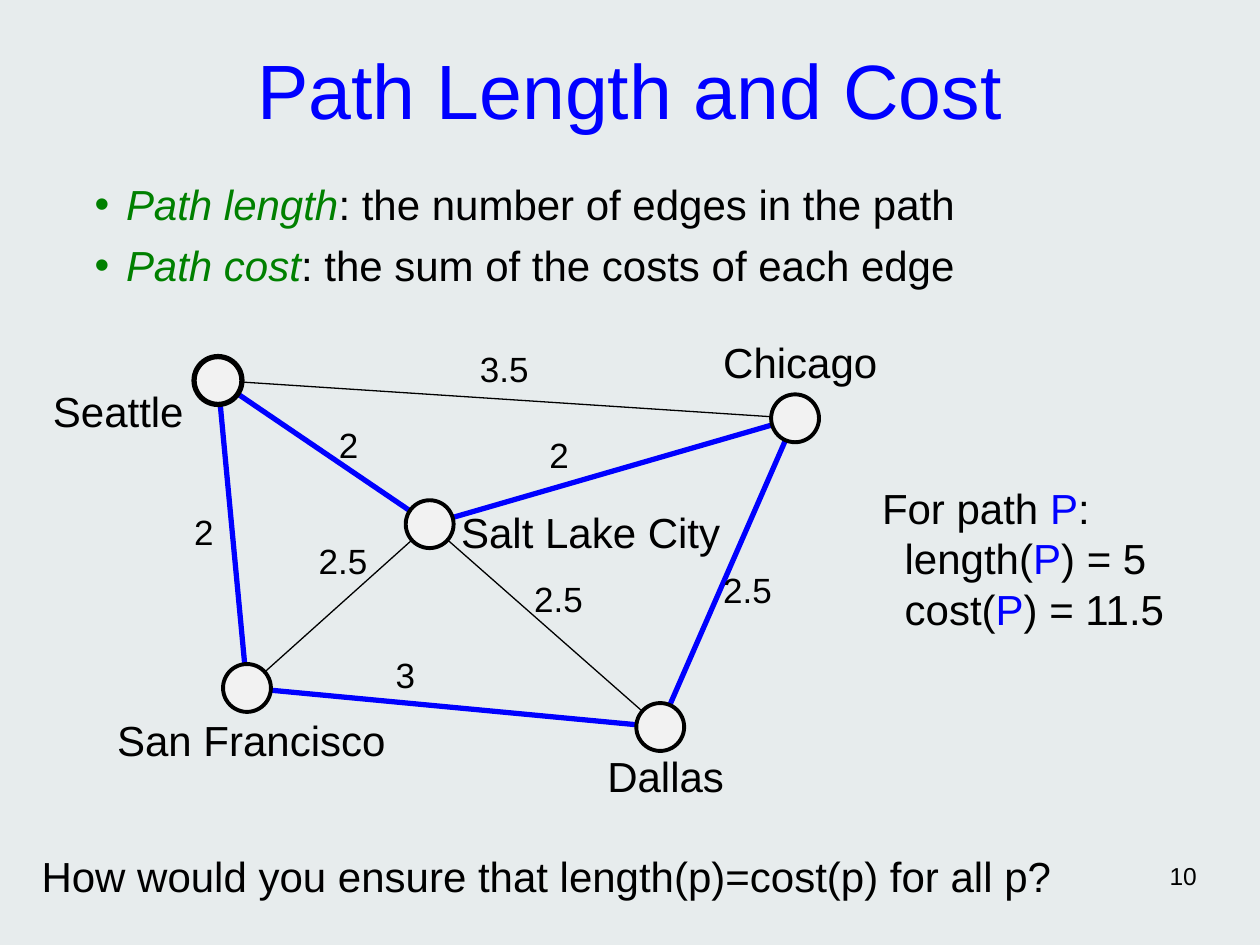
from dataclasses import dataclass

from lxml import etree
from pptx import Presentation
from pptx.dml.color import RGBColor
from pptx.enum.shapes import MSO_CONNECTOR, MSO_SHAPE
from pptx.enum.text import MSO_ANCHOR, MSO_AUTO_SIZE, PP_ALIGN
from pptx.oxml.ns import qn
from pptx.util import Inches, Pt

LINE = MSO_CONNECTOR.STRAIGHT
OVAL = MSO_SHAPE.OVAL
TOP, MIDDLE = MSO_ANCHOR.TOP, MSO_ANCHOR.MIDDLE
LEFT, CENTER, RIGHT = PP_ALIGN.LEFT, PP_ALIGN.CENTER, PP_ALIGN.RIGHT
FIXED = MSO_AUTO_SIZE.NONE


@dataclass(frozen=True)
class Theme:
    font: str = "Arial"
    back: str = "E7ECED"
    ink: str = "000000"
    blue: str = "0000FF"
    green: str = "008000"
    node: str = "F2F2F2"
    title: int = 44
    text: int = 24
    cost: int = 20
    number: int = 14
    lead: float = 1.2
    thin: float = 0.75
    ring: float = 2.25
    bold: float = 3


THEME = Theme()

# Graph data, relative to the graph box: centre, label box, ring width
CITIES = {
    "Seattle": ((1.31, 0.35), (0, 0.39, 1.15), THEME.bold),
    "San Francisco": ((1.54, 2.79), (0.51, 3, 2.24), THEME.ring),
    "Salt Lake City": ((2.99, 1.49), (3.24, 1.35, 2.17), THEME.ring),
    "Dallas": ((4.82, 3.1), (4.4, 3.29, 1.04), THEME.ring),
    "Chicago": ((5.89, 0.65), (5.32, 0, 1.34), THEME.ring),
}
# From, to, cost, label corner, on the path P
EDGES = [
    ("San Francisco", "Seattle", "2", (1.12, 1.38), True),
    ("Chicago", "Dallas", "2.5", (5.32, 1.84), True),
    ("Chicago", "Seattle", "3.5", (3.39, 0.09), False),
    ("Seattle", "Salt Lake City", "2", (2.27, 0.69), True),
    ("San Francisco", "Salt Lake City", "2.5", (2.11, 1.61), False),
    ("Salt Lake City", "Dallas", "2.5", (3.82, 1.91), False),
    ("Salt Lake City", "Chicago", "2", (3.94, 0.77), True),
    ("Dallas", "San Francisco", "3", (2.72, 2.52), True),
]
NODE = 0.38


def rgb(code):
    return RGBColor.from_string(code)


def place(shape, box):
    shape.left, shape.top, shape.width, shape.height = map(Inches, box)


def prep(frame, anchor=TOP):
    frame.margin_left = frame.margin_right = 0
    frame.margin_top = frame.margin_bottom = 0
    frame.auto_size = FIXED
    frame.word_wrap = True
    frame.vertical_anchor = anchor


def add_runs(para, runs, size, align=LEFT):
    """Fill a paragraph with (text, colour, italic) runs."""
    para.alignment = align
    for text, color, slant in runs:
        run = para.add_run()
        run.text = text
        font = run.font
        font.name, font.size, font.italic = THEME.font, Pt(size), slant
        font.color.rgb = rgb(color)


def add_panel(slide, box):
    """Add a clear freeform panel that carries text."""
    x, y, width, height = map(Inches, box)
    pen = slide.shapes.build_freeform(x, y)
    pen.add_line_segments([(x + width, y), (x + width, y + height),
                           (x, y + height)], close=True)
    panel = pen.convert_to_shape()
    panel.shadow.inherit = False
    panel.fill.background()
    panel.line.fill.background()
    return panel


def add_text(slide, box, lines, size, align=LEFT):
    frame = add_panel(slide, box).text_frame
    prep(frame)
    for i, runs in enumerate(lines):
        para = frame.add_paragraph() if i else frame.paragraphs[0]
        para.line_spacing = Pt(size * THEME.lead)
        add_runs(para, runs, size, align)
    return frame


def add_label(slide, box, text, size, align=LEFT):
    add_text(slide, box, [[(text, THEME.ink, False)]], size, align)


def add_title(slide, box):
    title = slide.shapes.title
    place(title, box)
    prep(title.text_frame, MIDDLE)
    add_runs(title.text_frame.paragraphs[0],
             [("Path Length and Cost", THEME.blue, False)], THEME.title, CENTER)


def add_bullet(para, color):
    props = para._p.get_or_add_pPr()
    props.set("marL", str(Inches(0.25)))
    props.set("indent", str(-Inches(0.25)))
    tint = etree.SubElement(props, qn("a:buClr"))
    etree.SubElement(tint, qn("a:srgbClr"), val=color)
    etree.SubElement(props, qn("a:buFont"), typeface=THEME.font)
    etree.SubElement(props, qn("a:buChar"), char="•")


def add_terms(slide, box):
    body = slide.placeholders[1]
    place(body, box)
    frame = body.text_frame
    prep(frame)
    terms = [("Path length", ": the number of edges in the path"),
             ("Path cost", ": the sum of the costs of each edge")]
    for i, (term, sense) in enumerate(terms):
        para = frame.add_paragraph() if i else frame.paragraphs[0]
        para.space_before = Pt(6)
        para.line_spacing = Pt(THEME.text * THEME.lead)
        add_bullet(para, THEME.green)
        add_runs(para, [(term, THEME.green, True), (sense, THEME.ink, False)],
                 THEME.text)


def add_edge(slide, start, end, color, width):
    edge = slide.shapes.add_connector(LINE, *map(Inches, (*start, *end)))
    edge.line.color.rgb = rgb(color)
    edge.line.width = Pt(width)
    etree.SubElement(edge._element.spPr, qn("a:effectLst"))


def add_node(slide, center, width):
    x, y = center
    box = (x - NODE / 2, y - NODE / 2, NODE, NODE)
    node = slide.shapes.add_shape(OVAL, *map(Inches, box))
    node.shadow.inherit = False
    node.fill.solid()
    node.fill.fore_color.rgb = rgb(THEME.node)
    node.line.color.rgb = rgb(THEME.ink)
    node.line.width = Pt(width)


def add_graph(slide, box):
    def shift(point):
        return box[0] + point[0], box[1] + point[1]

    # Edges lie below all labels and nodes
    for start, end, _, _, chosen in EDGES:
        color, width = ((THEME.blue, THEME.bold) if chosen
                        else (THEME.ink, THEME.thin))
        add_edge(slide, shift(CITIES[start][0]), shift(CITIES[end][0]),
                 color, width)
    for name, (_, (x, y, width), _) in CITIES.items():
        add_label(slide, (*shift((x, y)), width, 0.48), name, THEME.text)
    for _, _, cost, corner, _ in EDGES:
        width = 0.27 if len(cost) == 1 else 0.5
        add_label(slide, (*shift(corner), width, 0.41), cost, THEME.cost)
    for center, _, ring in CITIES.values():
        add_node(slide, shift(center), ring)


def add_result(slide, box):
    parts = [("For path ", ":"), ("length(", ") = 5"), ("cost(", ") = 11.5")]
    lines = [[(head, THEME.ink, False), ("P", THEME.blue, False),
              (tail, THEME.ink, False)] for head, tail in parts]
    frame = add_text(slide, box, lines, THEME.text)
    for para in frame.paragraphs[1:]:
        para._p.get_or_add_pPr().set("marL", str(Inches(0.18)))


def main():
    deck = Presentation()
    deck.slide_width, deck.slide_height = Inches(10), Inches(7.5)
    slide = deck.slides.add_slide(deck.slide_layouts[1])
    slide.background.fill.solid()
    slide.background.fill.fore_color.rgb = rgb(THEME.back)

    add_label(slide, (7.17, 6.83, 2.33, 0.31), "10", THEME.number, RIGHT)
    add_title(slide, (0.75, 0.08, 8.5, 1.25))
    add_terms(slide, (0.75, 1.42, 8.5, 1.08))
    add_graph(slide, (0.42, 2.67, 6.66, 3.77))
    add_result(slide, (7, 3.83, 2.45, 1.64))
    add_label(slide, (0.33, 6.75, 8.13, 0.48),
              "How would you ensure that length(p)=cost(p) for all p?",
              THEME.text)
    deck.save("out.pptx")


if __name__ == "__main__":
    main()
